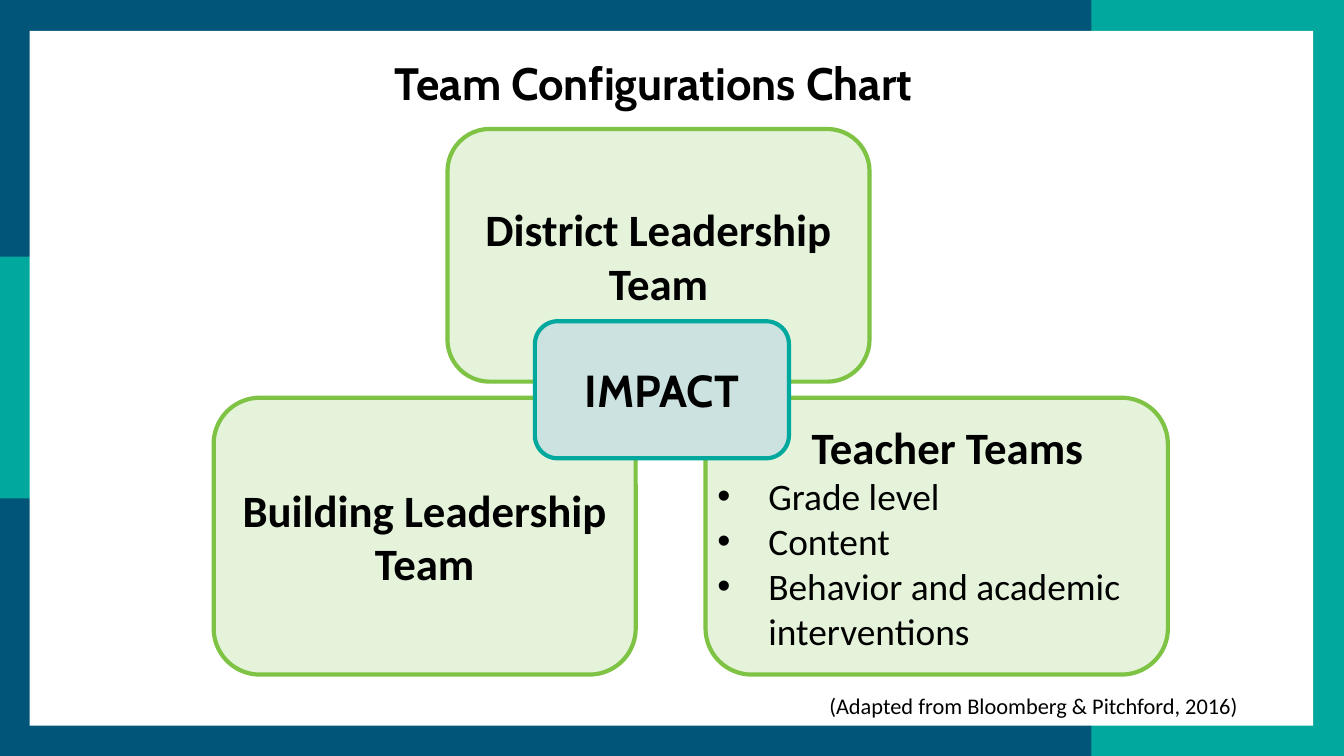
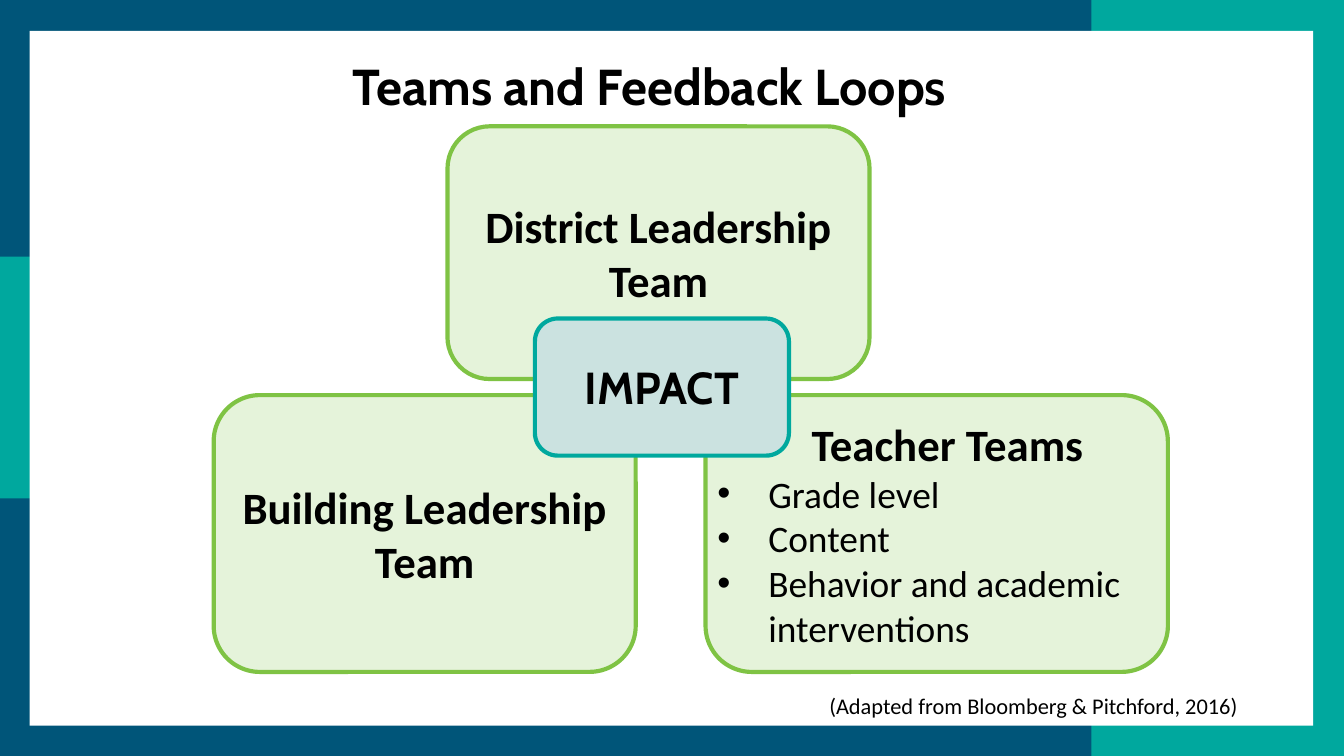
from dataclasses import dataclass

from lxml import etree
from pptx import Presentation
from pptx import util as u
from pptx.dml.color import RGBColor
from pptx.enum import shapes, text
from pptx.oxml.ns import qn

COLUMNS, ROWS = 100, 56.25
CENTER, LEFT, RIGHT = text.PP_ALIGN.CENTER, text.PP_ALIGN.LEFT, text.PP_ALIGN.RIGHT


@dataclass(frozen=True)
class Theme:
    navy: str = "005579"
    teal: str = "00A89E"
    pale_teal: str = "CBE2E0"
    green: str = "7FC344"
    pale_green: str = "E5F3DA"
    white: str = "FFFFFF"
    ink: str = "000000"
    display: str = "Cabin"
    body: str = "Calibri"
    heading_size: float = 24
    bullet_size: float = 20
    source_size: float = 12
    outline: float = 2.25


THEME = Theme()


def write(para, words, font=THEME.body, size=THEME.heading_size, bold=False,
          align=CENTER, indent=0, bullet=False):
    """Fill a paragraph; a vertical tab in the words is a line break."""
    para.text = words
    para.alignment = align
    for span in para.runs:
        span.font.name = font
        span.font.size = u.Pt(size)
        span.font.bold = bold
        span.font.color.rgb = RGBColor.from_string(THEME.ink)
    properties = para._p.get_or_add_pPr()
    properties.set("marL", str(u.Inches(indent)))
    properties.set("indent", str(-u.Inches(indent) if bullet else 0))
    if bullet:
        etree.SubElement(properties, qn("a:buFont")).set("typeface", "Arial")
        etree.SubElement(properties, qn("a:buChar")).set("char", "•")


def set_frame(frame, insets, wrap=True, anchor=text.MSO_ANCHOR.MIDDLE):
    frame.auto_size = text.MSO_AUTO_SIZE.NONE
    frame.word_wrap = wrap
    frame.vertical_anchor = anchor
    frame.margin_left, frame.margin_top, frame.margin_right, frame.margin_bottom = map(
        u.Inches, insets)


class TeamDeck:
    def __init__(self):
        self.deck = Presentation()
        self.deck.slide_width, self.deck.slide_height = u.Inches(10), u.Inches(5.625)
        self.layout = self.deck.slide_layouts.get_by_name("Title Only")
        self.page = None
        self.add_border()

    def area(self, column, row, columns, rows):
        across, down = self.deck.slide_width / COLUMNS, self.deck.slide_height / ROWS
        return [round(length) for length in
                (column * across, row * down, columns * across, rows * down)]

    def add_border(self):
        """Put the coloured border on the layout, behind its title."""
        for holder in list(self.layout.placeholders)[1:]:
            holder.element.getparent().remove(holder.element)
        self.page = self.deck.slides.add_slide(self.layout)
        bands = [
            (THEME.navy, (0, 0, COLUMNS, ROWS)),
            (THEME.teal, (0, 19.1, 4, 18)),
            (THEME.teal, (81.2, 0, 18.8, ROWS)),
            (THEME.white, (2.2, 2.3, 95.5, 51.7)),
        ]
        for position, (fill, place) in enumerate(bands, start=2):
            band = self.panel(place, fill, kind=shapes.MSO_SHAPE.RECTANGLE)
            self.layout.shapes.element.insert(position, band.element)

    def start_page(self, title, place, size):
        if self.page is None or self.page.shapes.title.has_text_frame and self.page.shapes.title.text:
            self.page = self.deck.slides.add_slide(self.layout)
        box = self.page.shapes.title
        box.left, box.top, box.width, box.height = self.area(*place)
        set_frame(box.text_frame, (0.1, 0.1, 0.1, 0.1))
        write(box.text_frame.paragraphs[0], title, font=THEME.display, size=size, bold=True)

    def panel(self, place, fill, line=None, kind=shapes.MSO_SHAPE.ROUNDED_RECTANGLE):
        box = self.page.shapes.add_shape(kind, *self.area(*place))
        box.shadow.inherit = False
        box.fill.solid()
        box.fill.fore_color.rgb = RGBColor.from_string(fill)
        if line:
            box.line.color.rgb = RGBColor.from_string(line)
            box.line.width = u.Pt(THEME.outline)
        else:
            box.line.fill.background()
        return box

    def team(self, words, place, fill=THEME.pale_green, line=THEME.green, font=THEME.body):
        box = self.panel(place, fill, line)
        set_frame(box.text_frame, (0, 0.05, 0, 0.05))
        write(box.text_frame.paragraphs[0], words, font=font, bold=True)

    def team_list(self, heading, items, place):
        frame = self.panel(place, THEME.pale_green, THEME.green).text_frame
        set_frame(frame, (0.1, 0.05, 0.3, 0.05), wrap=False)
        write(frame.paragraphs[0], heading, bold=True, indent=0.36)
        for item in items:
            write(frame.add_paragraph(), item, size=THEME.bullet_size, align=LEFT,
                  indent=0.38, bullet=True)

    def source(self, words):
        box = self.page.shapes.add_textbox(*self.area(4.9, 51, 88.2, 3))
        set_frame(box.text_frame, (0.1, 0.05, 0.1, 0.05), anchor=text.MSO_ANCHOR.TOP)
        write(box.text_frame.paragraphs[0], words, size=THEME.source_size, align=RIGHT)

    def team_chart(self, top):
        """Draw the three teams and the shared centre, starting at a row."""
        lower = top + 20
        self.team("District Leadership Team", (33.3, top, 31.4, 18.8))
        self.team("Building Leadership Team", (15.9, lower, 31.4, 20.6))
        self.team_list("Teacher Teams",
                       ["Grade level", "Content", "Behavior and academic \vinterventions"],
                       (52.5, lower, 34.4, 20.6))
        self.team("IMPACT", (39.8, top + 14.3, 18.9, 10.2),
                  fill=THEME.pale_teal, line=THEME.teal, font=THEME.display)
        self.source("(Adapted from Bloomberg & Pitchford, 2016)")


def main():
    teams = TeamDeck()
    teams.start_page("Team Configurations Chart ", (5.9, 3.7, 86.2, 4.8), size=24.3)
    teams.team_chart(top=9.6)
    teams.start_page("Teams and Feedback Loops", (5.2, 2.3, 86.2, 8.1), size=27)
    teams.team_chart(top=9.4)
    teams.deck.save("out.pptx")


if __name__ == "__main__":
    main()
